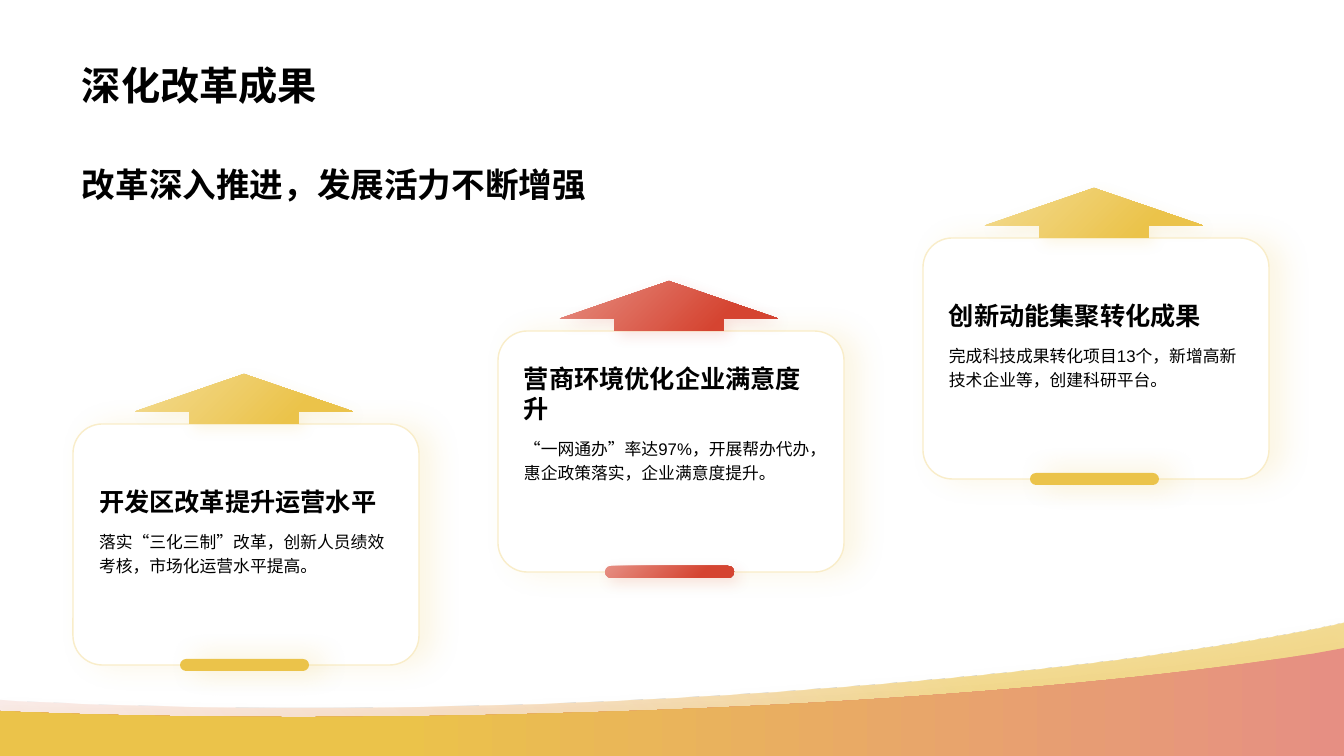
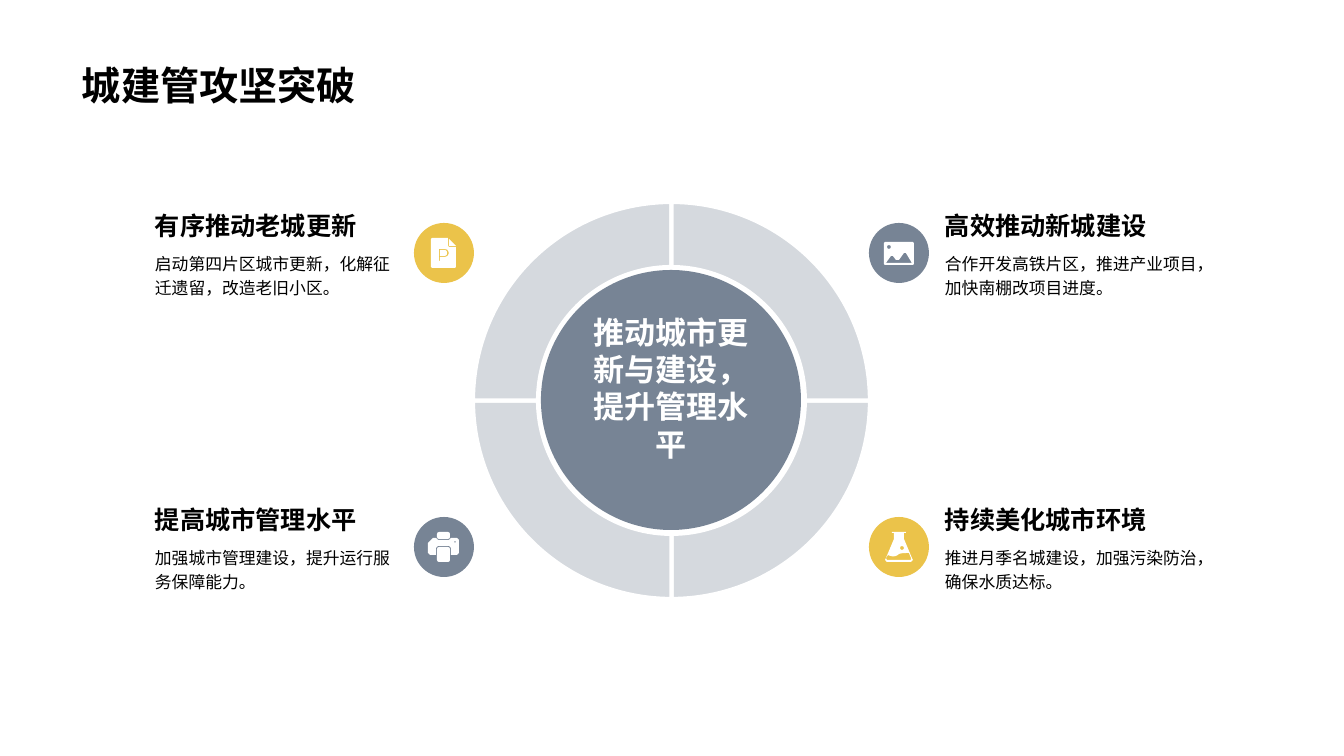
from lxml import etree
from pptx import Presentation
from pptx.dml.color import RGBColor
from pptx.enum.lang import MSO_LANGUAGE_ID
from pptx.enum.shapes import MSO_SHAPE
from pptx.enum.text import MSO_ANCHOR, MSO_AUTO_SIZE, PP_ALIGN
from pptx.oxml.ns import qn
from pptx.util import Emu, Pt

ROUNDED, UP_ARROW, ARC = MSO_SHAPE.ROUNDED_RECTANGLE, MSO_SHAPE.UP_ARROW, MSO_SHAPE.BLOCK_ARC
TOP, MIDDLE, BOTTOM = MSO_ANCHOR.TOP, MSO_ANCHOR.MIDDLE, MSO_ANCHOR.BOTTOM
LEFT, CENTER = PP_ALIGN.LEFT, PP_ALIGN.CENTER
NO_AUTOFIT = MSO_AUTO_SIZE.NONE
CHINESE = MSO_LANGUAGE_ID.SIMPLIFIED_CHINESE

EMU_PER_PX = 914400 / 100.8
SLIDE_W, SLIDE_H = 1344, 756
LATIN_FONT, CHINESE_FONT = "Arial", "Noto Sans CJK SC"
GOLD, RED, SLATE = "EBC34A", "D54431", "778495"
PALE_GOLD, PALE_RED, CARD_EDGE = "F3DB92", "E68F83", "F9EDC9"
BLACK, WHITE = "000000", "FFFFFF"

GOLD_FADE = (45, [(0, PALE_GOLD, 100), (0.75, GOLD, 100)])
RED_FADE = (45, [(0, PALE_RED, 100), (0.75, RED, 100)])
SOFT_GLOW = (GOLD, 15, 20, 10, 0)
STRONG_GLOW = (GOLD, 32, 20, 10, 0)
GOLD_DROP, RED_DROP = (GOLD, 15, 10, 5, 45), (RED, 15, 10, 5, 45)
WAVE_DROP = (GOLD, 15, 10, 4, 90)

TITLE = {"size": 28, "bold": True, "anchor": BOTTOM}
SUBTITLE = {"size": 24, "bold": True, "anchor": MIDDLE}
HEADING = {"size": 18, "bold": True, "anchor": BOTTOM}
BODY = {"size": 12, "spacing": 1.2}
HUB = {"size": 22.2, "bold": True, "color": WHITE, "align": CENTER}

CARDS = [
    ("开发区改革提升运营水平", "落实“三化三制”改革，创新人员绩效考核，市场化运营水平提高。",
     GOLD_FADE, GOLD_DROP, GOLD, STRONG_GLOW),
    ("营商环境优化企业满意度升", "“一网通办”率达97%，开展帮办代办，惠企政策落实，企业满意度提升。",
     RED_FADE, RED_DROP, RED_FADE, RED_DROP),
    ("创新动能集聚转化成果", "完成科技成果转化项目13个，新增高新技术企业等，创建科研平台。",
     GOLD_FADE, GOLD_DROP, GOLD, STRONG_GLOW),
]

BACK_WAVE = [(1344, 623), (1344, 756), (0, 756), (0, 700), (20, 701),
             (176, 709, 364, 710, 564, 703), (867, 691, 1135, 664, 1311, 630)]
FRONT_WAVE = [(1344, 648), (1344, 756), (0, 756), (0, 711), (20, 712),
              (176, 718, 364, 719, 564, 713), (867, 705, 1135, 682, 1311, 654)]
WAVES = [
    (BACK_WAVE, (315, [(0, PALE_RED, 15), (0.71, GOLD, 59)])),
    (FRONT_WAVE, (180, [(0, PALE_RED, 100), (0.71, GOLD, 100)])),
]


def px(length):
    """Turn slide pixels into EMU."""
    return Emu(round(length * EMU_PER_PX))


def rgb(color):
    """Turn a hex string into a colour."""
    return RGBColor.from_string(color)


def set_all(target, values):
    """Set every attribute named in a dict."""
    for name, value in values.items():
        setattr(target, name, value)


def set_alpha(color_element, percent):
    """Give a colour element an opacity."""
    if percent < 100:
        etree.SubElement(color_element, qn("a:alpha"), val=str(percent * 1000))


def paint(shape, fill, alpha=100):
    """Fill with one colour or with an (angle, stops) gradient."""
    if isinstance(fill, str):
        shape.fill.solid()
        shape.fill.fore_color.rgb = rgb(fill)
        alphas = [alpha]
    else:
        angle, stops = fill
        shape.fill.gradient()
        shape.fill.gradient_angle = (360 - angle) % 360
        for stop, (position, color, _) in zip(shape.fill.gradient_stops, stops):
            stop.position = position
            stop.color.rgb = rgb(color)
        alphas = [opacity for _, _, opacity in stops]
    for element, percent in zip(list(shape.element.spPr.iter(qn("a:srgbClr"))), alphas):
        set_alpha(element, percent)


def cast_shadow(shape, shadow):
    """Replace the theme shadow by none or by a coloured one."""
    shape.shadow.inherit = False
    if shadow:
        color, opacity, blur, distance, angle = shadow
        effects = shape.element.spPr.find(qn("a:effectLst"))
        outer = etree.SubElement(
            effects, qn("a:outerShdw"), blurRad=str(int(Pt(blur))), dist=str(int(Pt(distance))),
            dir=str(angle * 60000), algn="ctr", rotWithShape="0")
        set_alpha(etree.SubElement(outer, qn("a:srgbClr"), val=color), opacity)


def finish(shape, fill, alpha=100, edge=None, edge_width=1, shadow=None):
    """Apply fill, outline and shadow."""
    paint(shape, fill, alpha)
    if edge:
        shape.line.color.rgb = rgb(edge)
        shape.line.width = Pt(edge_width)
    else:
        shape.line.fill.background()
    cast_shadow(shape, shadow)
    return shape


def add_preset(slide, preset, box, adjustments, fill, **look):
    """Add a preset shape with its adjustments and look."""
    shape = slide.shapes.add_shape(preset, *map(px, box))
    for index, value in enumerate(adjustments):
        shape.adjustments[index] = value
    return finish(shape, fill, **look)


def flatten(outline):
    """Turn points and cubic curves into EMU points, with more steps on longer curves."""
    points = [outline[0]]
    for segment in outline[1:]:
        if len(segment) == 2:
            points.append(segment)
            continue
        knots = [points[-1], segment[:2], segment[2:4], segment[4:]]
        span = max(abs(knots[3][axis] - knots[0][axis]) for axis in (0, 1))
        steps = min(24, 1 + int(span) // 2)
        for step in range(1, steps + 1):
            t = step / steps
            weights = ((1 - t) ** 3, 3 * t * (1 - t) ** 2, 3 * t * t * (1 - t), t ** 3)
            points.append(tuple(sum(w * knot[axis] for w, knot in zip(weights, knots))
                                for axis in (0, 1)))
    return [(px(x), px(y)) for x, y in points]


def add_outline(slide, outlines, fill, dx=0, dy=0, shadow=None):
    """Add one freeform made of closed outlines, moved by dx and dy."""
    builder = None
    for outline in outlines:
        start, *rest = [(x + px(dx), y + px(dy)) for x, y in flatten(outline)]
        if builder is None:
            builder = slide.shapes.build_freeform(*start, scale=1.0)
        else:
            builder.move_to(*start)
        builder.add_line_segments(rest, close=True)
    return finish(builder.convert_to_shape(), fill, shadow=shadow)


def rounded(x, y, w, h, r):
    """Return the outline of a rounded box, or of a circle."""
    right, bottom, k = x + w, y + h, r * 0.45
    return [(x + r, y), (right - r, y), (right - k, y, right, y + k, right, y + r),
            (right, bottom - r), (right, bottom - k, right - k, bottom, right - r, bottom),
            (x + r, bottom), (x + k, bottom, x, bottom - k, x, bottom - r),
            (x, y + r), (x, y + k, x + k, y, x + r, y)]


DOCUMENT_ICON = [
    [(18, 15), (34, 15), (34, 23), (35, 24), (42, 24), (42, 44), (41, 45), (18, 45),
     (17, 44), (17, 16)],
    [(25, 26), (31, 26), (36, 26, 36, 34, 31, 34), (26, 34), (26, 38), (25, 38)],
    [(26, 27), (31, 27), (34, 27, 34, 33, 31, 33), (26, 33)],
    [(35, 16), (42, 23), (35, 23)],
]
LANDSCAPE_ICON = [
    rounded(15, 19, 30, 23, 1),
    [(17, 40), (22, 33), (24, 33), (27, 37), (30, 37), (35, 30), (37, 30), (43, 40)],
    rounded(18, 22, 4, 4, 2),
]
TOOLBOX_ICON = [
    rounded(23, 30, 13, 15, 2),
    [(22, 21), (24, 23), (35, 23), (37, 21), (43, 21), (45, 23), (45, 36), (43, 38),
     (37, 38), (37, 31), (35, 29), (24, 29), (22, 31), (22, 38), (16, 38), (14, 36),
     (14, 26), (19, 21)],
    rounded(40, 24, 2, 2, 1),
    rounded(23, 15, 13, 7, 2),
]
FLASK_ICON = [
    [(23, 15), (37, 15), (37, 16), (35, 16), (35, 22), (43, 41), (44, 43), (42, 45),
     (18, 45), (16, 43), (17, 41), (25, 22), (25, 16), (23, 16)],
    [(30, 37), (27, 40, 23, 40, 19, 38), (17, 41), (18, 43), (42, 43), (42, 41), (40, 36),
     (37, 36, 33, 36, 30, 37)],
    rounded(31, 29, 4, 4, 2),
]
TOPICS = [
    ("有序推动老城更新", "启动第四片区城市更新，化解征迁遗留，改造老旧小区。", GOLD, DOCUMENT_ICON),
    ("高效推动新城建设", "合作开发高铁片区，推进产业项目，加快南棚改项目进度。", SLATE, LANDSCAPE_ICON),
    ("提高城市管理水平", "加强城市管理建设，提升运行服务保障能力。", SLATE, TOOLBOX_ICON),
    ("持续美化城市环境", "推进月季名城建设，加强污染防治，确保水质达标。", GOLD, FLASK_ICON),
]


def write(frame, text, size, bold=False, color=BLACK, anchor=TOP, align=LEFT, spacing=None,
          margins=(10, 5)):
    """Write one formatted paragraph into a text frame."""
    side, end = map(px, margins)
    set_all(frame, {"word_wrap": True, "auto_size": NO_AUTOFIT, "vertical_anchor": anchor,
                    "margin_left": side, "margin_right": side,
                    "margin_top": end, "margin_bottom": end})
    paragraph = frame.paragraphs[0]
    set_all(paragraph, {"alignment": align, "line_spacing": spacing})
    run = paragraph.add_run()
    run.text = text
    set_all(run.font, {"name": LATIN_FONT, "size": Pt(size), "bold": bold,
                       "language_id": CHINESE})
    run.font.color.rgb = rgb(color)
    etree.SubElement(run.font._element, qn("a:ea"), typeface=CHINESE_FONT)


def add_text(slide, box, text, **style):
    """Add a text box."""
    write(slide.shapes.add_textbox(*map(px, box)).text_frame, text, **style)


def prepare_layout(deck):
    """Place the title once, on the layout that the slides share."""
    layout = deck.slide_layouts.get_by_name("Title Only")
    set_all(layout.placeholders[0],
            {"left": px(72), "top": px(14), "width": px(1198), "height": px(99)})
    return layout


def add_titled_slide(deck, layout, title):
    """Add a slide with the shared title style."""
    slide = deck.slides.add_slide(layout)
    write(slide.shapes.title.text_frame, title, **TITLE)
    return slide


def add_card(slide, left, top, card):
    """Add a card with its arrow, base bar and texts."""
    heading, body, arrow_fill, arrow_shadow, bar_fill, bar_shadow = card
    add_preset(slide, ROUNDED, (left, top, 346, 241), [0.122], WHITE,
               edge=CARD_EDGE, shadow=SOFT_GLOW)
    add_preset(slide, ROUNDED, (left + 107, top + 235, 129, 12), [0.5], bar_fill,
               shadow=bar_shadow)
    add_text(slide, (left + 16, top + 99, 311, 106), body, **BODY)
    add_text(slide, (left + 16, top + 21, 311, 77), heading, **HEADING)
    add_preset(slide, UP_ARROW, (left + 62, top - 50, 218, 50), [0.5, 0.749], arrow_fill,
               shadow=arrow_shadow)


def add_topic(slide, index, topic):
    """Add a heading, text and icon in one of four corners."""
    heading, body, color, icon = topic
    row, column = divmod(index, 2)
    top = 177 + 294 * row
    text_left, text_width, disc_left = [(143, 266, 414), (933, 293, 869)][column]
    add_text(slide, (text_left, top, text_width, 76), heading, margins=(12, 12), **HEADING)
    add_text(slide, (text_left, top + 61, text_width, 101), body, margins=(12, 12), **BODY)
    add_preset(slide, ROUNDED, (disc_left, top + 46, 60, 60), [0.5], color)
    add_outline(slide, icon, WHITE, disc_left, top + 46)


def add_ring(slide, text):
    """Add four quarter arcs around a hub; 54 adjustment units make a quarter turn."""
    for quarter in range(4):
        start = 54 * quarter
        add_preset(slide, ARC, (473, 202, 397, 397), [start, (start + 54) % 216, 0.164], SLATE,
                   alpha=30, edge=WHITE, edge_width=3)
    hub = add_preset(slide, ROUNDED, (541, 270, 260, 260), [0.5], SLATE)
    write(hub.text_frame, text, **HUB)


def main():
    """Build and save the two slides."""
    deck = Presentation()
    set_all(deck, {"slide_width": px(SLIDE_W), "slide_height": px(SLIDE_H)})
    layout = prepare_layout(deck)

    reform = add_titled_slide(deck, layout, "深化改革成果")
    add_text(reform, (72, 125, 599, 119), "改革深入推进，发展活力不断增强", **SUBTITLE)
    for index, card in enumerate(CARDS):
        add_card(reform, 73 + 425 * index, 424 - 93 * index, card)
    for outline, fill in WAVES:
        add_outline(reform, [outline], fill, shadow=WAVE_DROP)

    city = add_titled_slide(deck, layout, "城建管攻坚突破")
    for index, topic in enumerate(TOPICS):
        add_topic(city, index, topic)
    add_ring(city, "推动城市更新与建设，提升管理水平")

    deck.save("out.pptx")


if __name__ == "__main__":
    main()
